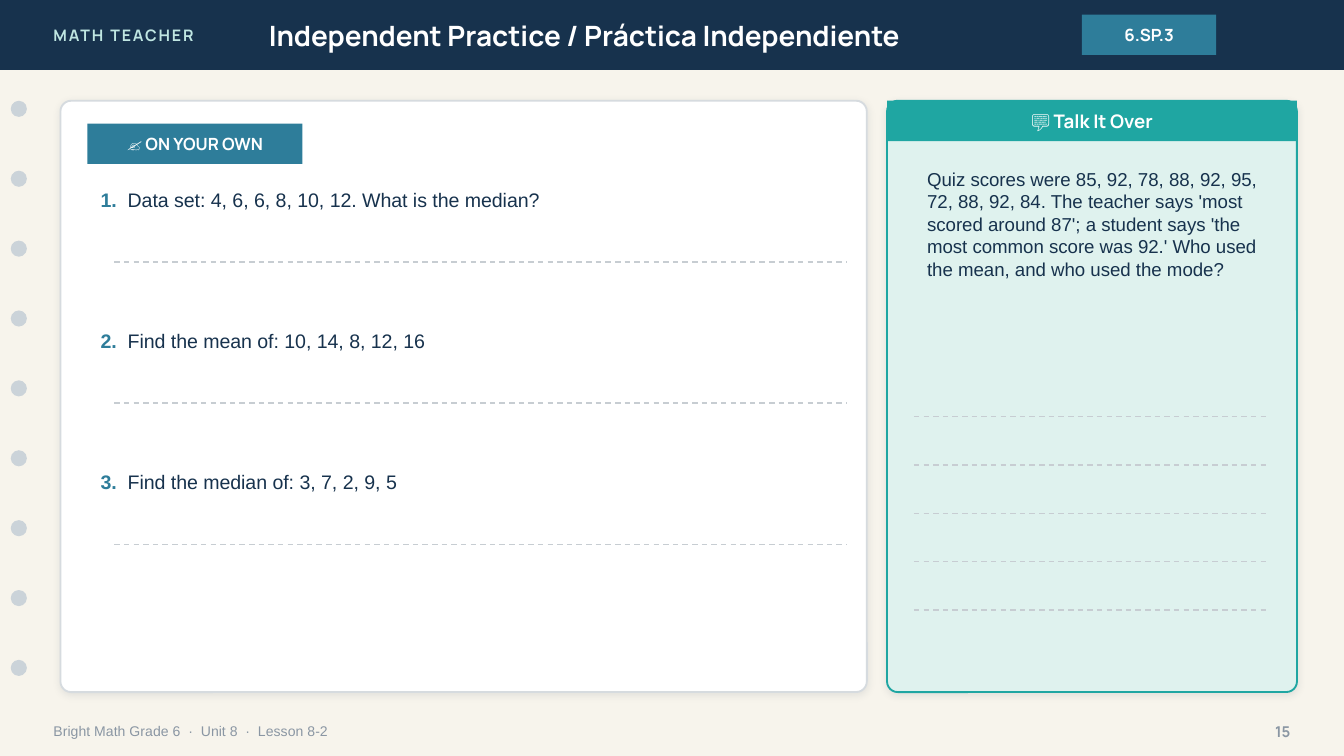
from lxml.etree import SubElement
from pptx import Presentation
from pptx.dml.color import RGBColor
from pptx.enum.dml import MSO_LINE_DASH_STYLE as Dash
from pptx.enum.shapes import MSO_CONNECTOR, MSO_SHAPE as Shape
from pptx.enum.text import MSO_ANCHOR as Anchor, MSO_AUTO_SIZE, PP_ALIGN as Align
from pptx.oxml.ns import qn
from pptx.util import Pt

BRAND = "MATH TEACHER"
TITLE = "Independent Practice / Práctica Independiente"
STANDARD = "6.SP.3"
FOOTER = "Bright Math Grade 6  ·  Unit 8  ·  Lesson 8-2"
PAGE = "15"
PRACTICE_LABEL = "✍️ ON YOUR OWN"
QUESTIONS = [
    "Data set: 4, 6, 6, 8, 10, 12. What is the median?",
    "Find the mean of: 10, 14, 8, 12, 16",
    "Find the median of: 3, 7, 2, 9, 5",
]
TALK_LABEL = "💬 Talk It Over"
TALK_PROMPT = (
    "Quiz scores were 85, 92, 78, 88, 92, 95, 72, 88, 92, 84. "
    "The teacher says 'most scored around 87'; a student says "
    "'the most common score was 92.' Who used the mean, and who used the mode?"
)
NAVY, BLUE, TEAL, MINT = "17324D", "2E7D9A", "1FA6A2", "DFF2EE"
WHITE, CREAM, GRAY, RULE = "FFFFFF", "F7F4EC", "8A96A3", "C7CDD2"
HEADING, BODY = "Manrope", "Arial"
HEADER_HEIGHT = 37.44
CARD_TOP, CARD_HEIGHT = 54, 316.8
HOLES, HOLE_STEP = 9, 37.44
QUESTION_TOP, QUESTION_STEP, ANSWER_DROP = 97.2, 75.6, 43.2
TALK_LINES, TALK_LINE_TOP, TALK_LINE_STEP = 5, 223.2, 25.92


def color(value):
    return RGBColor.from_string(value)


def add_box(slide, kind, bounds, fill, line=None):
    shape = slide.shapes.add_shape(kind, *map(Pt, bounds))
    shape.shadow.inherit = False
    shape.fill.solid()
    shape.fill.fore_color.rgb = color(fill)
    if line:
        shape.line.color.rgb = color(line)
        shape.line.width = Pt(1)
    else:
        shape.line.fill.background()
    return shape


def write(shape, text, size, font, ink, bold=False, align=Align.LEFT, anchor=Anchor.MIDDLE):
    frame = shape.text_frame
    frame.word_wrap = True
    frame.auto_size = MSO_AUTO_SIZE.NONE
    frame.vertical_anchor = anchor
    paragraph = frame.paragraphs[0]
    paragraph.alignment = align
    paragraph.font.size = Pt(size)
    paragraph.font.name = font
    paragraph.font.color.rgb = color(ink)
    paragraph.font.bold = bold
    paragraph.add_run().text = text
    return paragraph


def add_text(slide, bounds, *style, **options):
    return write(slide.shapes.add_textbox(*map(Pt, bounds)), *style, **options)


def add_label(slide, bounds, fill, text, size):
    shape = add_box(slide, Shape.RECTANGLE, bounds, fill)
    write(shape, text, size, HEADING, WHITE, True, Align.CENTER)


def add_card(slide, left, width, radius, fill, line):
    card = add_box(slide, Shape.ROUNDED_RECTANGLE, (left, CARD_TOP, width, CARD_HEIGHT), fill, line)
    card.adjustments[0] = radius
    effects = card._element.spPr.find(qn("a:effectLst"))
    shadow = SubElement(effects, qn("a:outerShdw"), blurRad=str(Pt(4)), dist=str(Pt(1)),
                        dir="5400000", algn="ctr", rotWithShape="0")
    tint = SubElement(shadow, qn("a:srgbClr"), val="1C2E42")
    SubElement(tint, qn("a:alpha"), val="10000")


def add_answer_line(slide, left, right, top):
    line = slide.shapes.add_connector(MSO_CONNECTOR.STRAIGHT, Pt(left), Pt(top), Pt(right), Pt(top))
    line.line.color.rgb = color(RULE)
    line.line.width = Pt(0.75)
    line.line.dash_style = Dash.DASH
    SubElement(line._element.spPr, qn("a:effectLst"))


def add_frame(slide):
    add_box(slide, Shape.RECTANGLE, (0, 0, 720, HEADER_HEIGHT), NAVY)
    brand = add_text(slide, (21.6, 0, 172.8, HEADER_HEIGHT), BRAND, 8.5, HEADING, "BFE6E2", True)
    brand.runs[0].font._element.set("spc", "100")
    title = slide.shapes.title
    title.left, title.top, title.width, title.height = map(Pt, (136.8, 0, 403.2, HEADER_HEIGHT))
    write(title, TITLE, 15, HEADING, WHITE, True)
    slide.shapes._spTree.append(title._element)
    add_label(slide, (579.6, 7.92, 72, 21.6), BLUE, STANDARD, 9)
    for index in range(HOLES):
        add_box(slide, Shape.OVAL, (5.76, CARD_TOP + index * HOLE_STEP, 8.64, 8.64), "CBD3D9")
    add_text(slide, (21.6, 381.6, 504, 20.16), FOOTER, 7.5, BODY, GRAY)
    add_text(slide, (662.4, 381.6, 36, 20.16), PAGE, 8, HEADING, GRAY, True, Align.RIGHT)


def add_practice(slide):
    add_card(slide, 32.4, 432, 0.018, WHITE, "D6DBDF")
    add_label(slide, (46.8, 66.24, 115.2, 21.6), BLUE, PRACTICE_LABEL, 9)
    for index, question in enumerate(QUESTIONS):
        top = QUESTION_TOP + index * QUESTION_STEP
        paragraph = add_text(slide, (46.8, top, 406.8, 36), f"{index + 1}.  ", 10.5, BODY, NAVY,
                             anchor=Anchor.TOP)
        number = paragraph.runs[0].font
        number.bold = True
        number.color.rgb = color(BLUE)
        paragraph.add_run().text = question
        add_answer_line(slide, 61.2, 453.6, top + ANSWER_DROP)


def add_talk(slide):
    add_card(slide, 475.2, 219.6, 0.026, MINT, TEAL)
    add_label(slide, (475.2, CARD_TOP, 219.6, 21.6), TEAL, TALK_LABEL, 10)
    add_text(slide, (489.6, 86.4, 194.4, 122.4), TALK_PROMPT, 10, BODY, NAVY, anchor=Anchor.TOP)
    for index in range(TALK_LINES):
        add_answer_line(slide, 489.6, 680.4, TALK_LINE_TOP + index * TALK_LINE_STEP)


def main():
    """Build the bilingual independent practice slide."""
    presentation = Presentation()
    presentation.slide_width, presentation.slide_height = Pt(720), Pt(405)
    slide = presentation.slides.add_slide(presentation.slide_layouts[5])
    slide.background.fill.solid()
    slide.background.fill.fore_color.rgb = color(CREAM)
    add_frame(slide)
    add_practice(slide)
    add_talk(slide)
    presentation.save("out.pptx")


if __name__ == "__main__":
    main()
